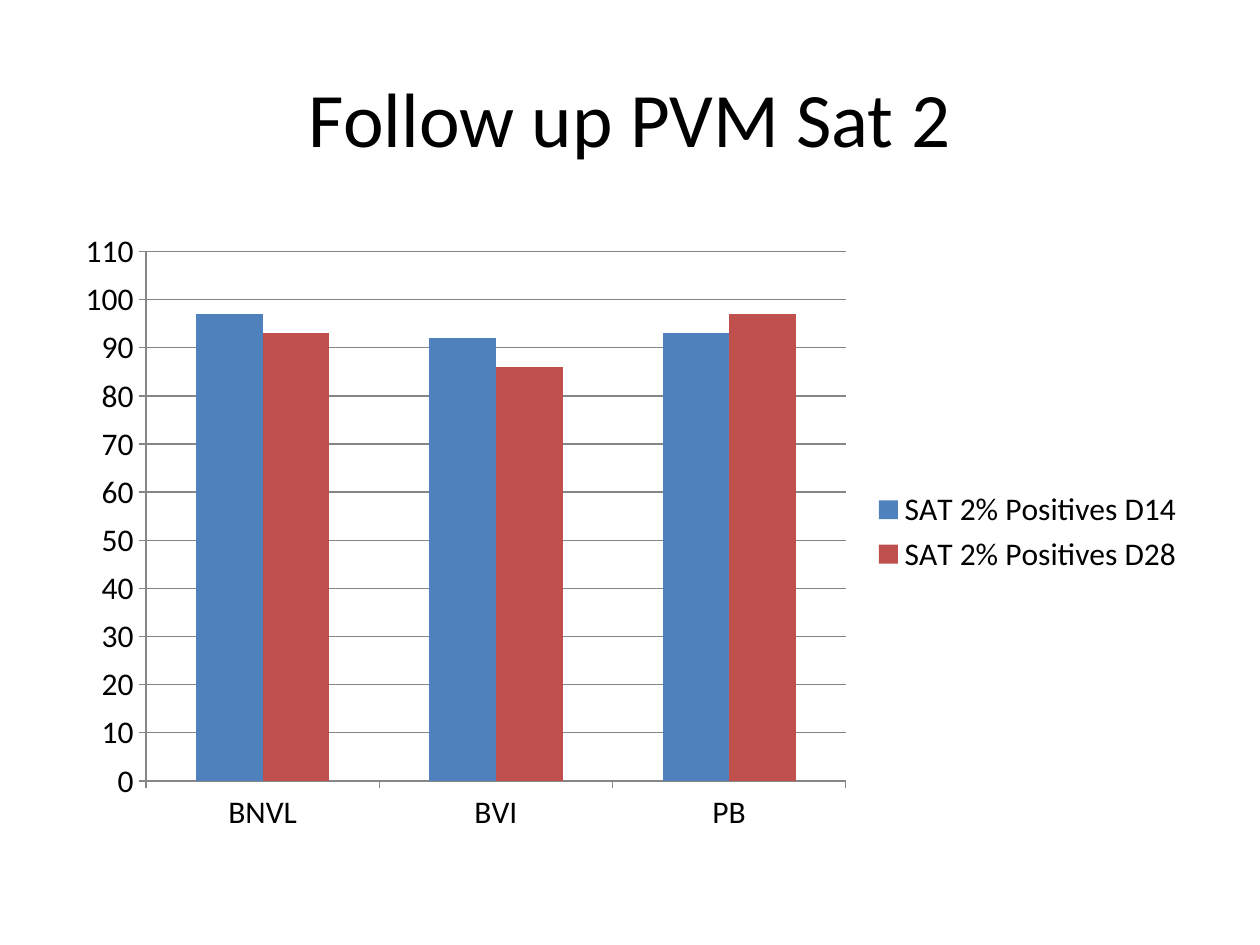
from pptx import Presentation
from pptx.chart.data import CategoryChartData
from pptx.dml.color import RGBColor
from pptx.enum.chart import XL_CHART_TYPE as Kind, XL_LEGEND_POSITION as Side
from pptx.enum.chart import XL_TICK_MARK as Tick
from pptx.enum.text import MSO_ANCHOR as Anchor, PP_ALIGN as Align
from pptx.util import Emu, Pt

BLACK = RGBColor(0x00, 0x00, 0x00)
GRAY = RGBColor(0x86, 0x86, 0x86)
BLUE = RGBColor(0x4F, 0x81, 0xBD)
RED = RGBColor(0xC0, 0x50, 0x4D)
FACE = "Calibri"
GROUPS = ["BNVL", "BVI", "PB"]
SERIES = [
    ("SAT 2% Positives D14", [97, 92, 93], BLUE),
    ("SAT 2% Positives D28", [93, 86, 97], RED),
]


def px(n):
    """Turn pixels into EMU."""
    return Emu(n * 914400 // 126)


def style(font, size):
    """Set the face, size and colour of a font."""
    font.name = FACE
    font.size = Pt(size)
    font.color.rgb = BLACK


def title(slide, box, text):
    """Place the centred title in its box."""
    frame = slide.shapes.add_textbox(*map(px, box)).text_frame
    frame.word_wrap = True
    frame.vertical_anchor = Anchor.MIDDLE
    para = frame.paragraphs[0]
    para.alignment = Align.CENTER
    run = para.add_run()
    run.text = text
    style(run.font, 44)


def rule(line):
    """Draw an axis or grid line in thin gray."""
    line.color.rgb = GRAY
    line.width = Pt(0.75)


def columns(slide, box):
    """Place the clustered column chart in its box."""
    data = CategoryChartData()
    data.categories = GROUPS
    for name, vals, _ in SERIES:
        data.add_series(name, vals)
    chart = slide.shapes.add_chart(
        Kind.COLUMN_CLUSTERED, *map(px, box), data).chart
    style(chart.font, 18)
    chart.has_title = False
    chart.has_legend = True
    chart.legend.position = Side.RIGHT
    chart.legend.include_in_layout = False
    style(chart.legend.font, 18)

    plot = chart.plots[0]
    plot.vary_by_categories = False
    plot.gap_width = 150
    plot.overlap = 0
    for bars, (_, _, color) in zip(plot.series, SERIES):
        bars.format.fill.solid()
        bars.format.fill.fore_color.rgb = color
        bars.invert_if_negative = False

    for axis in (chart.category_axis, chart.value_axis):
        axis.major_tick_mark = Tick.OUTSIDE
        axis.minor_tick_mark = Tick.NONE
        style(axis.tick_labels.font, 18)
        rule(axis.format.line)
    scale = chart.value_axis
    scale.minimum_scale = 0
    scale.maximum_scale = 110
    scale.major_unit = 10
    scale.has_major_gridlines = True
    rule(scale.major_gridlines.format.line)


def main():
    """Build the slide and save it."""
    deck = Presentation()
    deck.slide_width, deck.slide_height = px(1260), px(945)
    slide = deck.slides.add_slide(deck.slide_layouts[6])
    title(slide, (63, 38, 1134, 157), "Follow up PVM Sat 2")
    columns(slide, (63, 220, 1134, 624))
    deck.save("out.pptx")


if __name__ == "__main__":
    main()
